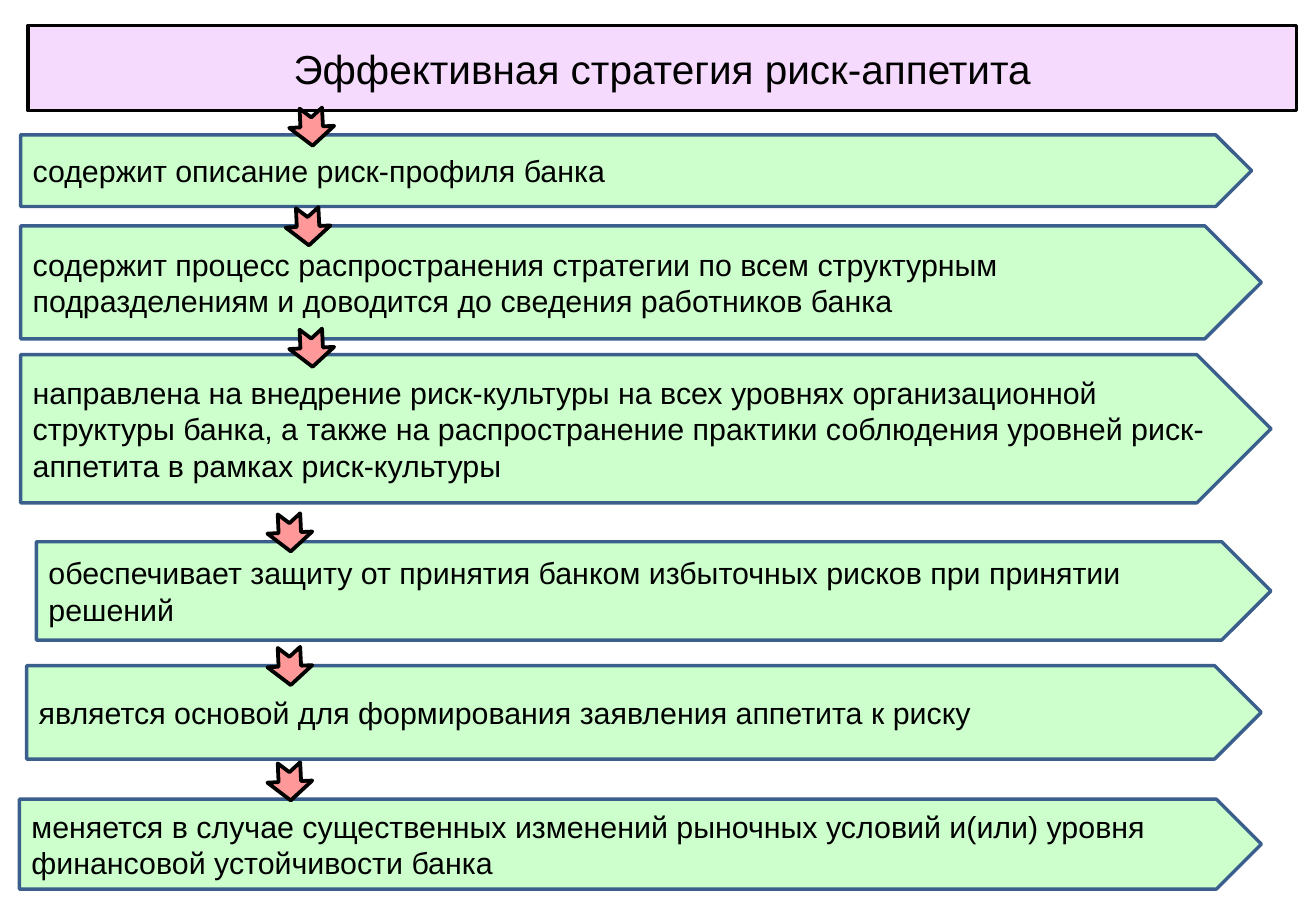
"""Builds a slide listing the features of an effective risk appetite strategy."""
from lxml import etree
from pptx import Presentation
from pptx.dml.color import RGBColor
from pptx.enum.shapes import MSO_SHAPE as Preset
from pptx.enum.text import MSO_ANCHOR as Anchor, PP_ALIGN as Align
from pptx.oxml.ns import qn
from pptx.util import Inches, Pt

COLORS = {
    "title": "F6DAFE",
    "feature": "CCFFCC",
    "feature_line": "3A5F8C",
    "arrow": "FF9999",
    "black": "000000",
}
FEATURES = [
    (0.17, 1.11, 10.13, 0.59, "содержит описание риск-профиля банка"),
    (0.17, 1.86, 10.21, 0.93, "содержит процесс распространения стратегии по всем "
     "структурным подразделениям и доводится до сведения работников банка"),
    (0.17, 2.92, 10.29, 1.22, "направлена на внедрение риск-культуры на всех уровнях "
     "организационной структуры банка, а также на распространение практики "
     "соблюдения уровней риск-аппетита в рамках риск-культуры"),
    (0.3, 4.46, 10.16, 0.81, "обеспечивает защиту от принятия банком избыточных "
     "рисков при принятии решений"),
    (0.22, 5.48, 10.16, 0.77, "является основой для формирования заявления аппетита к риску"),
    (0.16, 6.58, 10.22, 0.74, "меняется в случае существенных изменений рыночных "
     "условий и(или) уровня финансовой устойчивости банка"),
]
ARROWS = [(2.41, 0.86), (2.38, 1.68), (2.41, 2.68), (2.23, 4.2), (2.23, 5.3), (2.23, 6.25)]


def paint(shape, fill, line, width):
    shape.fill.solid()
    shape.fill.fore_color.rgb = RGBColor.from_string(COLORS[fill])
    shape.line.color.rgb = RGBColor.from_string(COLORS[line])
    shape.line.width = Pt(width)
    shape.shadow.inherit = False


def write(shape, text, size, align):
    frame = shape.text_frame
    frame.text = text
    frame.word_wrap = True
    frame.vertical_anchor = Anchor.MIDDLE
    paragraph = frame.paragraphs[0]
    paragraph.alignment = align
    font = paragraph.runs[0].font
    font.name = "Arial"
    font.size = Pt(size)
    font.color.rgb = RGBColor.from_string(COLORS["black"])


presentation = Presentation()
presentation.slide_width = Inches(10.83)
presentation.slide_height = Inches(7.5)
slide = presentation.slides.add_slide(presentation.slide_layouts[5])

title = slide.shapes.title
title.left, title.top = Inches(0.23), Inches(0.21)
title.width, title.height = Inches(10.44), Inches(0.7)
geometry = etree.SubElement(title.element.spPr, qn("a:prstGeom"), prst="round2DiagRect")
etree.SubElement(geometry, qn("a:avLst"))
paint(title, "title", "black", 2)
write(title, "Эффективная стратегия риск-аппетита", 24, Align.CENTER)

for left, top, width, height, text in FEATURES:
    feature = slide.shapes.add_shape(
        Preset.PENTAGON, Inches(left), Inches(top), Inches(width), Inches(height))
    paint(feature, "feature", "feature_line", 2)
    write(feature, text, 18, Align.LEFT)

for left, top in ARROWS:
    arrow = slide.shapes.add_shape(
        Preset.NOTCHED_RIGHT_ARROW, Inches(left), Inches(top), Inches(0.31), Inches(0.37))
    arrow.rotation = 87.3
    paint(arrow, "arrow", "black", 2.25)

presentation.save("out.pptx")
